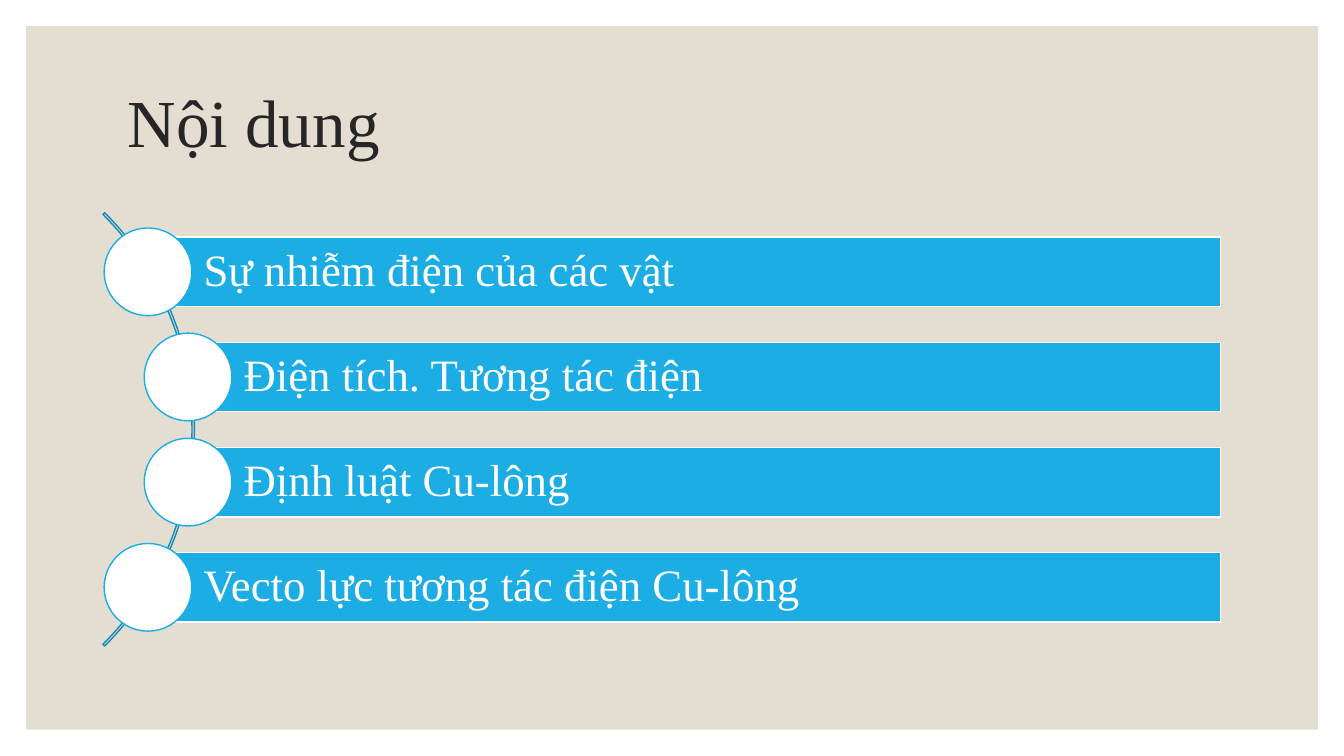
import pptx
import pptx.dml.color
import pptx.enum.shapes
import pptx.enum.text
import pptx.util

Cm = pptx.util.Cm
Pt = pptx.util.Pt
SHAPES = pptx.enum.shapes.MSO_SHAPE

TOPICS = [
    ("Sự nhiễm điện của các vật", 3.73),
    ("Điện tích. Tương tác điện", 4.74),
    ("Định luật Cu-lông", 4.74),
    ("Vecto lực tương tác điện Cu-lông", 3.73),
]
FIRST_MIDDLE = 6.85
PITCH = 2.65
BAR_RIGHT = 30.76
BAR_HEIGHT = 1.75
CIRCLE_SIZE = 2.21


def color(hex_string):
    return pptx.dml.color.RGBColor.from_string(hex_string)


class Page:
    font = "Times New Roman"
    white = "FFFFFF"
    blue = "1CADE4"
    dark_blue = "168BB7"
    beige = "E3DED1"
    ink = "262626"

    def __init__(self, deck):
        self.slide = deck.slides.add_slide(deck.slide_layouts[6])
        self.slide.background.fill.solid()
        self.slide.background.fill.fore_color.rgb = color(self.white)

    def shape(self, preset, left, top, width, height, fill=None, line=None):
        shape = self.slide.shapes.add_shape(
            preset, Cm(left), Cm(top), Cm(width), Cm(height))
        shape.shadow.inherit = False
        if fill:
            shape.fill.solid()
            shape.fill.fore_color.rgb = color(fill)
        else:
            shape.fill.background()
        if line:
            shape.line.color.rgb = color(line)
            shape.line.width = Pt(1)
        else:
            shape.line.fill.background()
        return shape

    def label(self, box, text, size, text_color, left_inset=0.25):
        """Set one left-aligned, vertically centred paragraph in the box."""
        frame = box.text_frame
        frame.word_wrap = True
        frame.vertical_anchor = pptx.enum.text.MSO_ANCHOR.MIDDLE
        frame.margin_left = Cm(left_inset)
        frame.margin_right = Cm(0.25)
        para = frame.paragraphs[0]
        para.text = text
        para.alignment = pptx.enum.text.PP_ALIGN.LEFT
        para.line_spacing = 0.9
        para.font.name = self.font
        para.font.size = Pt(size)
        para.font.color.rgb = color(text_color)

    def title(self, text):
        box = self.slide.shapes.add_textbox(Cm(2.97), Cm(1.78), Cm(27.56), Cm(2.77))
        self.label(box, text, 48, self.ink)

    def arc(self):
        arc = self.shape(SHAPES.BLOCK_ARC, -10.54, 3.1, 15.44, 15.44,
                         line=self.dark_blue)
        for index, value in enumerate((189, 27, 0.004)):
            arc.adjustments[index] = value

    def topic(self, text, center, middle):
        """Draw a bar that starts at the centre of its circle."""
        bar = self.shape(SHAPES.RECTANGLE, center, middle - BAR_HEIGHT / 2,
                         BAR_RIGHT - center, BAR_HEIGHT, self.blue, self.white)
        self.label(bar, text, 32, self.white, left_inset=1.4)
        self.shape(SHAPES.OVAL, center - CIRCLE_SIZE / 2, middle - CIRCLE_SIZE / 2,
                   CIRCLE_SIZE, CIRCLE_SIZE, self.white, self.blue)


def main():
    deck = pptx.Presentation()
    deck.slide_width = Cm(33.87)
    deck.slide_height = Cm(19.05)
    page = Page(deck)
    page.shape(SHAPES.RECTANGLE, 0.66, 0.66, 32.56, 17.73, page.beige)
    page.title("Nội dung")
    page.arc()
    for row, (text, center) in enumerate(TOPICS):
        page.topic(text, center, FIRST_MIDDLE + row * PITCH)
    deck.save("out.pptx")


if __name__ == "__main__":
    main()
